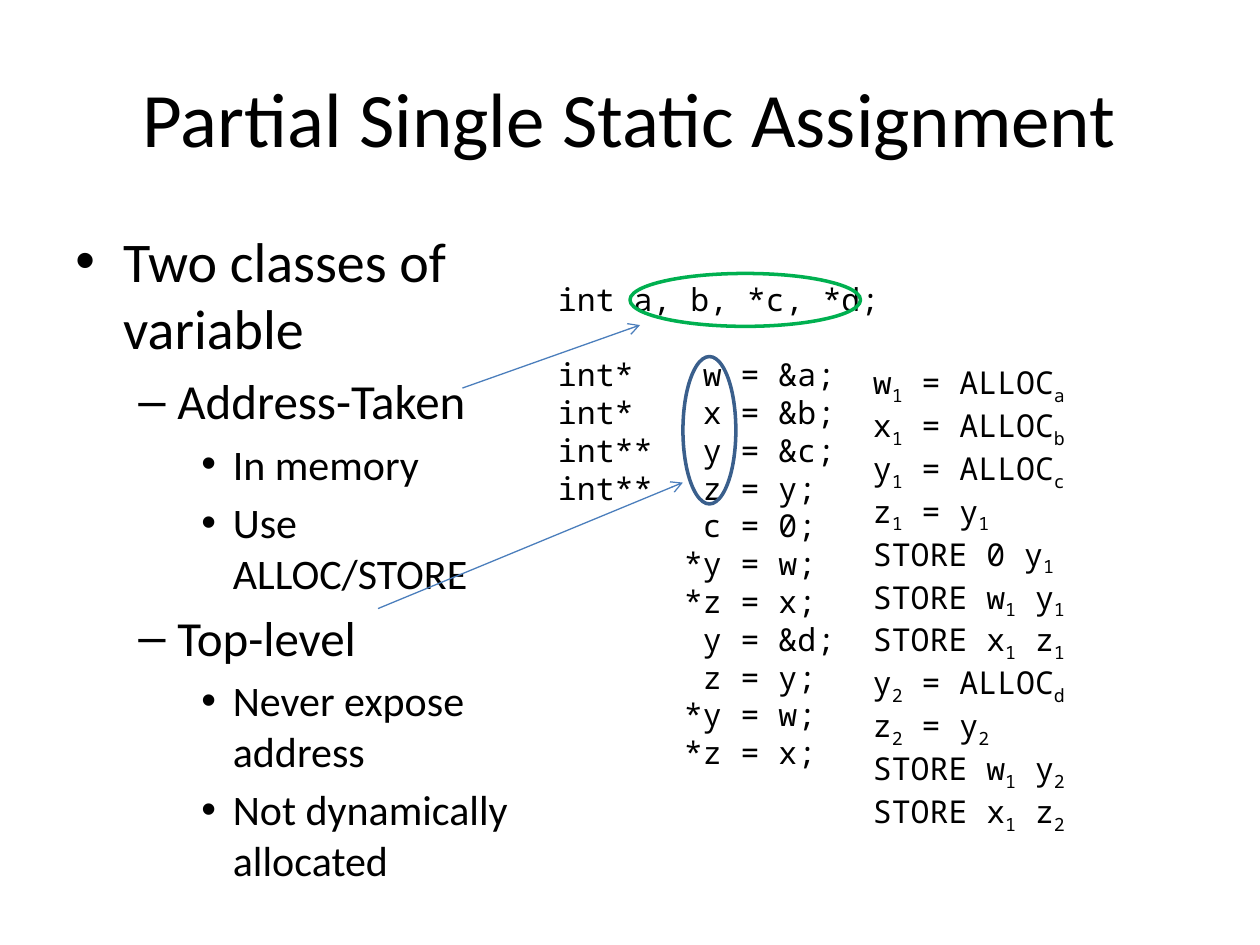
from typing import NamedTuple

from lxml import etree
from pptx import Presentation
from pptx import util as u
from pptx.dml.color import RGBColor
from pptx.enum import shapes, text
from pptx.oxml.ns import qn

BODY_FONT = "Calibri"
CODE_FONT = "Noto Sans Mono"
CODE_SIZE = 18
CODE_LINE_HEIGHT = 21.6
CODE_TAB = 1
BLACK = "000000"


class Box(NamedTuple):
    left: float
    top: float
    width: float
    height: float


class Level(NamedTuple):
    bullet: str
    size: int
    margin: float
    hanging: float


class Ring(NamedTuple):
    box: Box
    color: str


class Arrow(NamedTuple):
    start: tuple[float, float]
    end: tuple[float, float]


LEVELS = [
    Level("•", 32, 0.38, 0.38),
    Level("–", 28, 0.81, 0.31),
    Level("•", 24, 1.25, 0.25),
]
OUTLINE = [
    (0, "Two classes of variable"),
    (1, "Address-Taken"),
    (2, "In memory"),
    (2, "Use ALLOC/STORE"),
    (1, "Top-level"),
    (2, "Never expose address"),
    (2, "Not dynamically allocated"),
]
DECLARATION = "int a, b, *c, *d;"
STATEMENTS = [
    "int*\t w = &a;",
    "int*\t x = &b;",
    "int**\t y = &c;",
    "int**\t z = y;",
    "\t c = 0;",
    "\t*y = w;",
    "\t*z = x;",
    "\t y = &d;",
    "\t z = y;",
    "\t*y = w;",
    "\t*z = x;",
]
# The character after each underscore is a subscript.
SSA_LINES = [
    "w_1 = ALLOC_a",
    "x_1 = ALLOC_b",
    "y_1 = ALLOC_c",
    "z_1 = y_1",
    "STORE 0 y_1",
    "STORE w_1 y_1",
    "STORE x_1 z_1",
    "y_2 = ALLOC_d",
    "z_2 = y_2",
    "STORE w_1 y_2",
    "STORE x_1 z_2",
]
RINGS = [
    Ring(Box(5.42, 2.83, 0.42, 1.17), "3A5F8C"),
    Ring(Box(5, 2.17, 1.83, 0.42), "00B050"),
]
ARROWS = [
    Arrow((3.67, 3.08), (5.08, 2.58)),
    Arrow((3, 4.83), (5.42, 3.83)),
]


def rgb(color: str) -> RGBColor:
    return RGBColor.from_string(color)


def inches(values) -> list[u.Inches]:
    return [u.Inches(value) for value in values]


def add_text(slide, box: Box, content: str):
    text_frame = slide.shapes.add_textbox(*inches(box)).text_frame
    text_frame.word_wrap = True
    text_frame.text = content
    return text_frame


def format_runs(paragraph, font: str, size: int) -> None:
    for run in paragraph.runs:
        run.font.name = font
        run.font.size = u.Pt(size)
        run.font.color.rgb = rgb(BLACK)


def set_bullet(paragraph, level: Level) -> None:
    properties = paragraph._p.get_or_add_pPr()
    properties.set("marL", str(u.Inches(level.margin)))
    properties.set("indent", str(-u.Inches(level.hanging)))
    etree.SubElement(properties, qn("a:buFont")).set("typeface", "Arial")
    etree.SubElement(properties, qn("a:buChar")).set("char", level.bullet)


def set_tab_stop(paragraph, position: float) -> None:
    tab_stops = etree.SubElement(paragraph._p.get_or_add_pPr(), qn("a:tabLst"))
    tab_stop = etree.SubElement(tab_stops, qn("a:tab"))
    tab_stop.set("pos", str(u.Inches(position)))
    tab_stop.set("algn", "l")


def add_title(slide) -> None:
    text_frame = add_text(slide, Box(0.5, 0.3, 9, 1.25), "Partial Single Static Assignment")
    text_frame.vertical_anchor = text.MSO_ANCHOR.MIDDLE
    paragraph = text_frame.paragraphs[0]
    paragraph.alignment = text.PP_ALIGN.CENTER
    format_runs(paragraph, BODY_FONT, 44)


def add_outline(slide) -> None:
    content = "\n".join(line for _, line in OUTLINE)
    text_frame = add_text(slide, Box(0.5, 1.75, 3.67, 4.95), content)
    for paragraph, (depth, _) in zip(text_frame.paragraphs, OUTLINE):
        level = LEVELS[depth]
        paragraph.level = depth
        paragraph.space_before = u.Pt(level.size * 0.2)
        set_bullet(paragraph, level)
        format_runs(paragraph, BODY_FONT, level.size)


def add_source_code(slide) -> None:
    content = "\n".join([DECLARATION, *STATEMENTS])
    text_frame = add_text(slide, Box(4.33, 2.17, 3.42, 4.04), content)
    text_frame.paragraphs[1].space_before = u.Pt(CODE_LINE_HEIGHT)
    for paragraph in text_frame.paragraphs:
        set_tab_stop(paragraph, CODE_TAB)
        format_runs(paragraph, CODE_FONT, CODE_SIZE)


def add_ssa_code(slide) -> None:
    text_frame = add_text(slide, Box(6.83, 2.83, 2.67, 3.43), "")
    for index, line in enumerate(SSA_LINES):
        paragraph = text_frame.add_paragraph() if index else text_frame.paragraphs[0]
        first, *rest = line.split("_")
        paragraph.add_run().text = first
        for part in rest:
            subscript = paragraph.add_run()
            subscript.text = part[0]
            subscript.font._element.set("baseline", "-25000")
            if part[1:]:
                paragraph.add_run().text = part[1:]
        format_runs(paragraph, CODE_FONT, CODE_SIZE)


def add_ring(slide, ring: Ring) -> None:
    shape = slide.shapes.add_shape(shapes.MSO_SHAPE.OVAL, *inches(ring.box))
    shape.shadow.inherit = False
    shape.fill.background()
    shape.line.color.rgb = rgb(ring.color)
    shape.line.width = u.Pt(2)


def add_arrow(slide, arrow: Arrow) -> None:
    connector = slide.shapes.add_connector(
        shapes.MSO_CONNECTOR.STRAIGHT, *inches(arrow.start + arrow.end)
    )
    connector.line.color.rgb = rgb("4B7EBC")
    connector.line.width = u.Pt(0.75)
    etree.SubElement(connector.line._get_or_add_ln(), qn("a:tailEnd")).set("type", "arrow")
    etree.SubElement(connector._element.spPr, qn("a:effectLst"))


def main() -> None:
    presentation = Presentation()
    presentation.slide_width = u.Inches(10)
    presentation.slide_height = u.Inches(7.5)
    slide = presentation.slides.add_slide(presentation.slide_layouts[6])
    add_title(slide)
    add_outline(slide)
    add_source_code(slide)
    add_ssa_code(slide)
    for ring in RINGS:
        add_ring(slide, ring)
    for arrow in ARROWS:
        add_arrow(slide, arrow)
    presentation.save("out.pptx")


if __name__ == "__main__":
    main()
